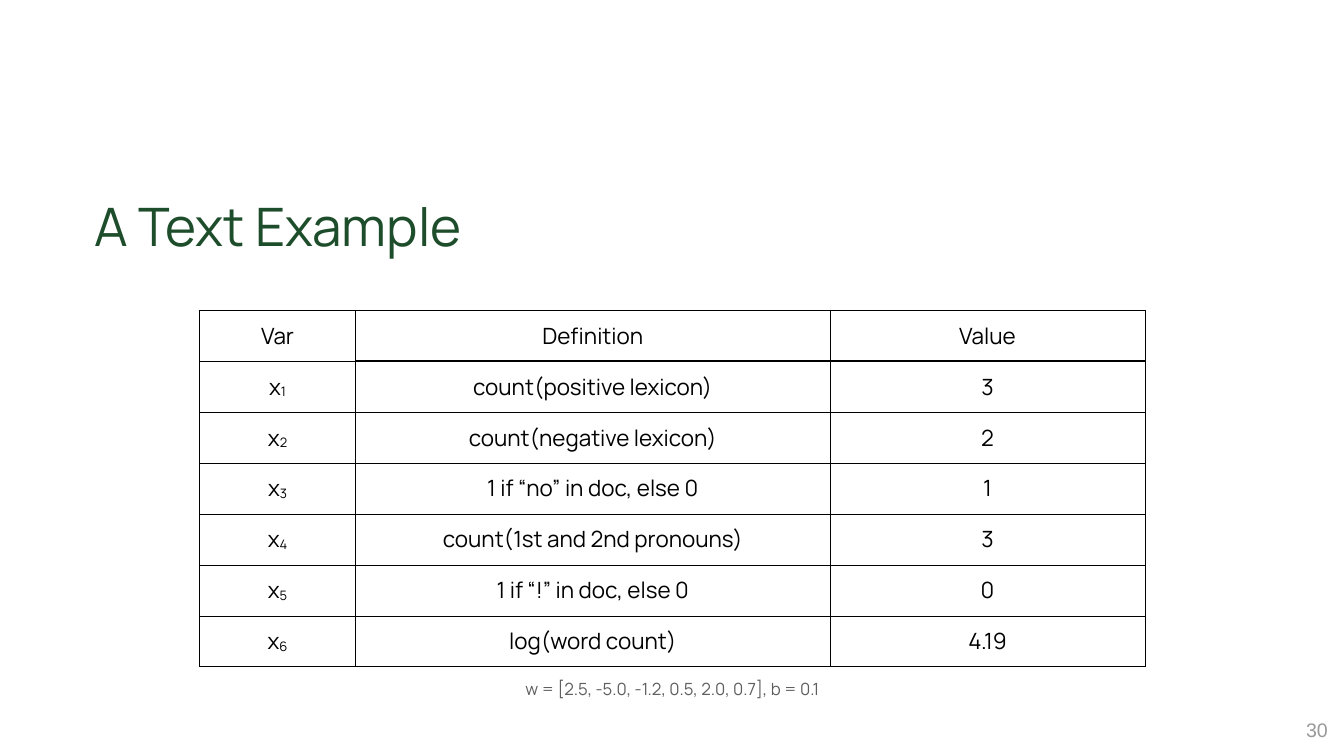
from pptx import Presentation
from pptx.dml.color import RGBColor
from pptx.enum.text import MSO_ANCHOR, PP_ALIGN
from pptx.oxml.ns import qn
from pptx.util import Inches, Pt
from lxml import etree

CENTER, RIGHT, LEFT = PP_ALIGN.CENTER, PP_ALIGN.RIGHT, PP_ALIGN.LEFT
TOP, MIDDLE = MSO_ANCHOR.TOP, MSO_ANCHOR.MIDDLE

GREEN = RGBColor(0x1E, 0x4D, 0x2B)
BLACK = RGBColor(0x00, 0x00, 0x00)
DARK_GREY = RGBColor(0x5E, 0x5E, 0x5E)
GREY = RGBColor(0x99, 0x99, 0x9A)
FONT = "Manrope"

SLIDE_W, SLIDE_H = 26.67, 15
COL_SHARES = (0.165, 0.502, 0.333)
THIN, THICK = 1, 3

HEADER = ("Var", "Definition", "Value")
FEATURES = (
    ("count(positive lexicon)", "3"),
    ("count(negative lexicon)", "2"),
    ("1 if “no” in doc, else 0", "1"),
    ("count(1st and 2nd pronouns)", "3"),
    ("1 if “!” in doc, else 0", "0"),
    ("log(word count)", "4.19"),
)


def set_margins(target, margin):
    target.margin_left = target.margin_right = Inches(margin)
    target.margin_top = target.margin_bottom = Inches(margin)


def format_runs(p, size, color, align, font=FONT):
    p.alignment = align
    for r in p.runs:
        r.font.size = Pt(size)
        r.font.name = font
        r.font.color.rgb = color


def place_title(slide, box, text):
    sp = slide.shapes.title
    sp.left, sp.top, sp.width, sp.height = map(Inches, box)
    tf = sp.text_frame
    tf.text = text
    tf.word_wrap = True
    tf.vertical_anchor = TOP
    set_margins(tf, 0.1)
    format_runs(tf.paragraphs[0], 75.7, GREEN, LEFT)


def place_label(slide, box, text, size, color, align, margin, font=FONT):
    tf = slide.shapes.add_textbox(*map(Inches, box)).text_frame
    tf.text = text
    tf.word_wrap = False
    tf.vertical_anchor = MIDDLE
    set_margins(tf, margin)
    format_runs(tf.paragraphs[0], size, color, align, font)


def set_borders(cell, **widths):
    """Draw the four sides; widths are in points, keyed L, R, T, B."""
    tc_pr = cell._tc.get_or_add_tcPr()
    for i, side in enumerate("LRTB"):
        width = Pt(widths.get(side, THIN))
        ln = etree.Element(qn(f"a:ln{side}"), w=str(int(width)))
        fill = etree.SubElement(ln, qn("a:solidFill"))
        etree.SubElement(fill, qn("a:srgbClr"), val=str(BLACK))
        tc_pr.insert(i, ln)


def fill_cell(cell, text, subscript=None):
    cell.fill.background()
    cell.vertical_anchor = MIDDLE
    set_margins(cell, 0.06)
    p = cell.text_frame.paragraphs[0]
    p.text = text
    if subscript:
        r = p.add_run()
        r.text = subscript
        r.font._element.set("baseline", "-6000")
    format_runs(p, 32, BLACK, CENTER)


def place_feature_table(slide, box):
    rows = len(FEATURES) + 1
    frame = slide.shapes.add_table(rows, len(HEADER), *map(Inches, box))
    table = frame.table
    table.first_row = table.horz_banding = False
    for col, share in zip(table.columns, COL_SHARES):
        col.width = Inches(box[2] * share)
    for row in table.rows:
        row.height = Inches(box[3] / rows)

    # Header row, with its heavier rule under all but the first column
    for c, text in enumerate(HEADER):
        fill_cell(table.cell(0, c), text)
        set_borders(table.cell(0, c), B=THICK if c else THIN)

    # One row for each feature
    for i, (definition, value) in enumerate(FEATURES, start=1):
        fill_cell(table.cell(i, 0), "x", str(i))
        fill_cell(table.cell(i, 1), definition)
        fill_cell(table.cell(i, 2), value)
        for c in range(len(HEADER)):
            set_borders(table.cell(i, c), T=THICK if i == 1 and c else THIN)


def main():
    prs = Presentation()
    prs.slide_width, prs.slide_height = Inches(SLIDE_W), Inches(SLIDE_H)
    slide = prs.slides.add_slide(prs.slide_layouts[5])

    place_title(slide, (1.77, 3.73, 23.92, 1.68), "A Text Example")
    # Page number
    place_label(slide, (25.85, 14.22, 0.55, 0.53), "30",
                28, GREY, RIGHT, 0.05, "Arial")
    place_feature_table(slide, (3.96, 6.15, 18.76, 7.08))
    # Weights and bias
    place_label(slide, (10.25, 13.38, 6.18, 0.56),
                "w = [2.5, -5.0, -1.2, 0.5, 2.0, 0.7], b = 0.1",
                24, DARK_GREY, CENTER, 0.06)
    prs.save("out.pptx")


if __name__ == "__main__":
    main()
